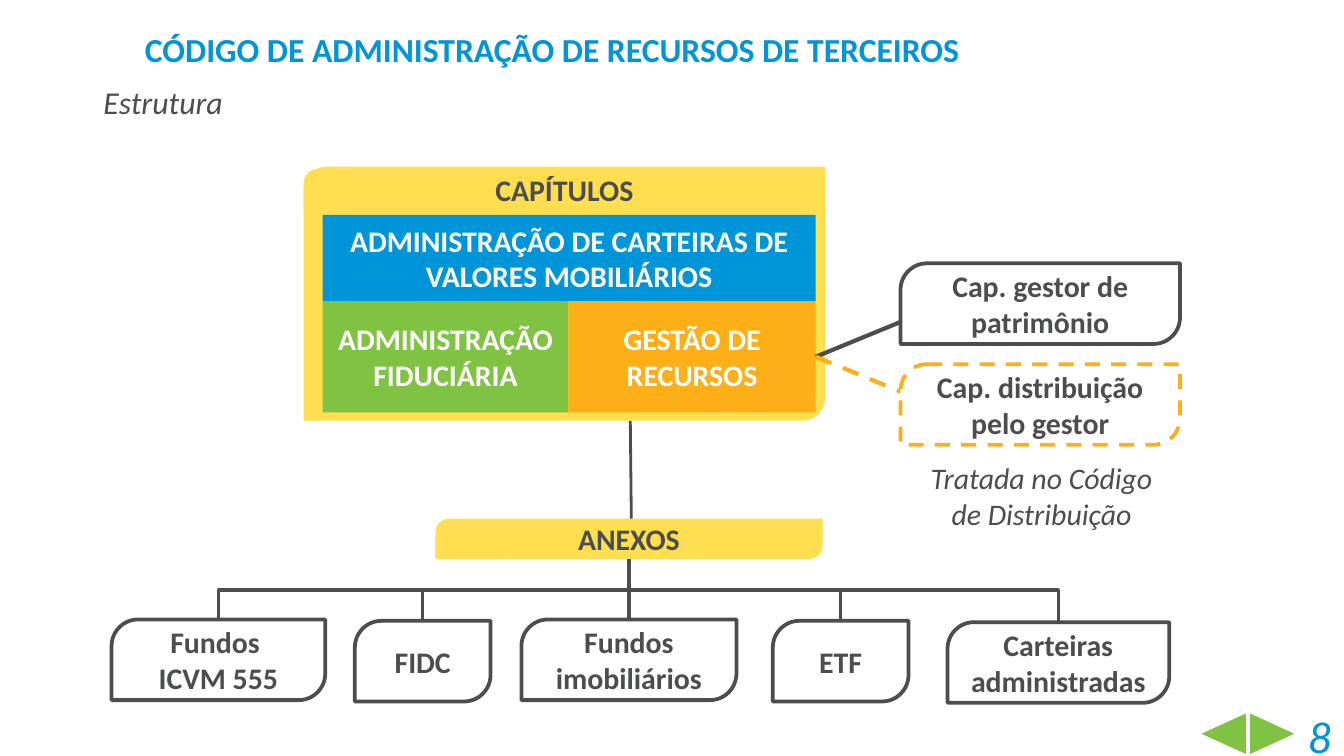
from lxml import etree
from pptx import Presentation
from pptx.dml.color import RGBColor
from pptx.enum import dml, shapes, text
from pptx.oxml import ns
from pptx.util import Inches, Pt

THEME = {
    "font": "Calibri", "dark": "4C4D4F", "yellow": "FFDF4F", "green": "80C342",
    "orange": "FCAF17", "blue": "0095D9", "white": "FFFFFF",
    "body": 16, "title": 18, "sub": 17, "page": 24,
}

TITLE = "CÓDIGO DE ADMINISTRAÇÃO DE RECURSOS DE TERCEIROS"
SUB = "Estrutura"
NOTE = "Tratada no Código de Distribuição"
PAGE = "8"
FRAME = (2.26, 1.24, 3.88, 1.89)
HEAD = ("CAPÍTULOS", (2.26, 1.26, 3.88, 0.3))
ANNEX = ("ANEXOS", (3.24, 3.86, 2.88, 0.3))
PARTS = [
    ("ADMINISTRAÇÃO DE CARTEIRAS DE VALORES MOBILIÁRIOS", (2.4, 1.6, 3.67, 0.64), "blue"),
    ("ADMINISTRAÇÃO FIDUCIÁRIA", (2.4, 2.24, 1.83, 0.83), "green"),
    ("GESTÃO DE RECURSOS", (4.23, 2.24, 1.84, 0.83), "orange"),
]
SIDES = [
    ("Cap. gestor de patrimônio", 1.96, 2.31, "dark", False),
    ("Cap. distribuição pelo gestor", 2.71, 3.0, "orange", True),
]
FUNDS = [
    ("Fundos \nICVM 555", 0.83, 4.61, 1.59),
    ("FIDC", 2.64, 4.62, 1.01),
    ("Fundos imobiliários", 3.88, 4.61, 1.6),
    ("ETF", 5.75, 4.62, 1.01),
    ("Carteiras administradas", 7.05, 4.63, 1.65),
]
ARROWS = [(9.3, 1.09, False), (8.94, 1.1, True)]
AXIS, BUS, TALL = 4.68, 4.39, 0.6

KIND = shapes.MSO_SHAPE
LINK = shapes.MSO_CONNECTOR
ALIGN = text.PP_ALIGN
MID = text.MSO_ANCHOR.MIDDLE
TOP = text.MSO_ANCHOR.TOP

deck = Presentation()
deck.slide_width = Inches(10)
deck.slide_height = Inches(10) * 9 // 16
slide = deck.slides.add_slide(deck.slide_layouts[6])


def tint(name):
    return RGBColor.from_string(THEME[name])


def write(shape, words, color="dark", size="body", align=ALIGN.CENTER,
          bold=True, anchor=MID):
    frame = shape.text_frame
    frame.word_wrap = True
    frame.vertical_anchor = anchor
    frame.text = words
    for para in frame.paragraphs:
        para.alignment = align
        font = para.font
        font.name, font.size = THEME["font"], Pt(THEME[size])
        font.bold, font.italic = bold, not bold
        font.color.rgb = tint(color)


def block(kind, box, fill, edge=None, dash=False, adjs=()):
    shape = slide.shapes.add_shape(kind, *map(Inches, box))
    shape.shadow.inherit = False
    shape.fill.solid()
    shape.fill.fore_color.rgb = tint(fill)
    for i, value in enumerate(adjs):
        shape.adjustments[i] = value
    if edge:
        stroke(shape.line, edge, 2, dash)
    else:
        shape.line.fill.background()
    return shape


def leaf(box, fill, edge=None, dash=False, curve=0.33):
    return block(KIND.ROUND_2_DIAG_RECTANGLE, box, fill, edge, dash, (curve, 0))


def stroke(line, color, width, dash=False):
    line.color.rgb = tint(color)
    line.width = Pt(width)
    if dash:
        line.dash_style = dml.MSO_LINE.DASH


def join(start, end, color="dark", width=1.75, dash=False, kind=LINK.STRAIGHT):
    link = slide.shapes.add_connector(kind, *map(Inches, start + end))
    stroke(link.line, color, width, dash)
    props = link._element.spPr
    etree.SubElement(props, ns.qn("a:effectLst"))
    if kind == LINK.ELBOW:
        props.find(ns.qn("a:prstGeom")).set("prst", "bentConnector2")
    return link


def label(words, box, *style):
    write(slide.shapes.add_textbox(*map(Inches, box)), words, *style)


join((4.69, 3.13), (4.7, 4.11), width=1.5)
leaf(FRAME, "yellow", curve=0.09)
for words, box, fill in PARTS:
    part = block(KIND.RECTANGLE, box, fill)
    write(part, words, "white")
for words, box in (HEAD, ANNEX):
    write(leaf(box, "yellow"), words)

for words, top, tip, edge, dash in SIDES:
    link = join((6.07, 2.65), (6.91, tip), edge, 2.25, dash)
    link.begin_connect(part, 3)
    etree.SubElement(link.line._get_or_add_ln(), ns.qn("a:tailEnd"), type="triangle")
    write(leaf((6.7, top, 2.08, TALL), "white", edge, dash), words)

for words, left, top, wide in FUNDS:
    mid = left + wide / 2
    if abs(mid - AXIS) < 0.01:
        join((AXIS, 4.16), (AXIS, top))
    else:
        join((AXIS, BUS), (mid, top), kind=LINK.ELBOW)
    write(leaf((left, top, wide, TALL), "white", "dark"), words)

for left, tip, flip in ARROWS:
    arrow = block(KIND.RIGHT_ARROW, (left, 5.31, 0.33, 0.3), "green", adjs=(0.66, tip))
    if flip:
        arrow._element.spPr.find(ns.qn("a:xfrm")).set("flipH", "1")

label(NOTE, (6.8, 3.37, 1.9, 0.64), "dark", "body", ALIGN.CENTER, False, TOP)
label(PAGE, (8.11, 5.32, 1.89, 0.3), "blue", "page", ALIGN.RIGHT, False, MID)
label(TITLE, (0.98, 0.15, 7.13, 0.43), "blue", "title", ALIGN.LEFT, True, MID)
label(SUB, (0.67, 0.57, 7.01, 0.35), "dark", "sub", ALIGN.LEFT, False, TOP)

deck.save("out.pptx")
